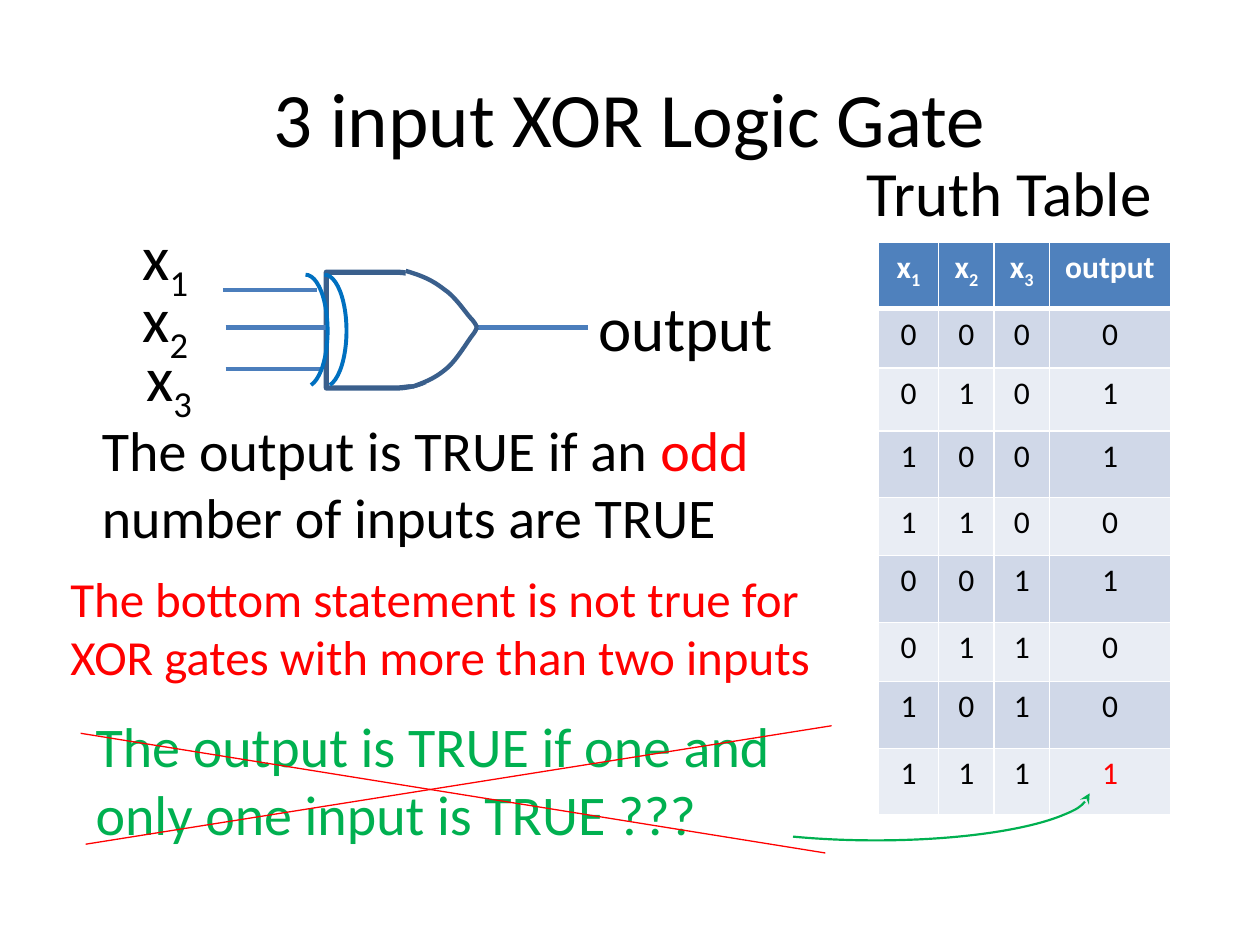
import itertools
from dataclasses import dataclass

import pptx
import pptx.dml.color
import pptx.enum.shapes
import pptx.enum.text
import pptx.oxml
import pptx.oxml.ns
import pptx.util

SHAPE = pptx.enum.shapes.MSO_SHAPE
ALIGN = pptx.enum.text.PP_ALIGN
ANCHOR = pptx.enum.text.MSO_ANCHOR


@dataclass(frozen=True)
class Theme:
    font: str = "Calibri"
    black: str = "000000"
    white: str = "FFFFFF"
    red: str = "FF0000"
    green: str = "00B050"
    wire: str = "4B7EBC"
    gate: str = "3A5F8C"
    arc: str = "0070C0"
    header: str = "4F81BD"
    bands: tuple = ("D0D8E8", "E9EDF4")
    title: int = 44
    label: int = 36
    body: int = 32
    remark: int = 28
    cell: int = 18


T = Theme()
WIDTH, HEIGHT = pptx.util.Inches(10), pptx.util.Inches(7.5)
COLS, ROWS = 100, 75  # layout grid covering the whole slide


def col(n):
    return round(n * WIDTH / COLS)


def row(n):
    return round(n * HEIGHT / ROWS)


def box(x, y, w, h):
    return col(x), row(y), col(w), row(h)


def rgb(value):
    return pptx.dml.color.RGBColor.from_string(value)


def add_run(p, text, size, color, bold=False, subscript=False):
    r = p.add_run()
    r.text = text
    r.font.name, r.font.size, r.font.bold = T.font, pptx.util.Pt(size), bold
    r.font.color.rgb = rgb(color)
    if subscript:
        r.font._element.set("baseline", "-25000")


def add_text(s, place, size, *runs, inset=1, align=ALIGN.LEFT, anchor=ANCHOR.TOP):
    """Each run is (text, colour) or (text, colour, subscript)."""
    tf = s.shapes.add_textbox(*box(*place)).text_frame
    tf.word_wrap, tf.vertical_anchor, tf.margin_left = True, anchor, col(inset)
    p = tf.paragraphs[0]
    p.alignment = align
    for text, color, *sub in runs:
        add_run(p, text, size, color, subscript=bool(sub))


def style_line(sp, color, width):
    sp.line.color.rgb = rgb(color)
    sp.line.width = pptx.util.Pt(width)


def add_line(shapes, start, end, color, width):
    line = shapes.add_connector(
        pptx.enum.shapes.MSO_CONNECTOR.STRAIGHT,
        col(start[0]), row(start[1]), col(end[0]), row(end[1]))
    style_line(line, color, width)
    pptx.oxml.ns.qn("a:effectLst")
    line._element.spPr.append(pptx.oxml.parse_xml(
        f'<a:effectLst {pptx.oxml.ns.nsdecls("a")}/>'))


def add_outline(shapes, kind, place, color, width, adjust=()):
    sp = shapes.add_shape(kind, *box(*place))
    sp.shadow.inherit = False
    sp.fill.background()
    style_line(sp, color, width)
    for i, value in enumerate(adjust):
        sp.adjustments[i] = value
    return sp


def bezier(points, steps=12):
    """Sample a chain of cubic curves that share their end points."""
    out = [points[0]]
    for i in range(0, len(points) - 1, 3):
        a, b, c, d = points[i:i + 4]
        for t in (k / steps for k in range(1, steps + 1)):
            u = 1 - t
            out.append(tuple(
                u**3 * a[j] + 3 * u * u * t * b[j] + 3 * u * t * t * c[j] + t**3 * d[j]
                for j in (0, 1)))
    return out


def add_curve(shapes, points, color, width):
    start, *rest = [(col(x), row(y)) for x, y in bezier(points)]
    fb = shapes.build_freeform(*start)
    fb.add_line_segments(rest, close=False)
    sp = fb.convert_to_shape()
    sp.shadow.inherit = False
    sp.fill.background()
    style_line(sp, color, width)


def add_gate(s):
    shapes = s.shapes.add_group_shape().shapes
    bow = (162, 50.54)
    add_line(shapes, (37.7, 26), (46.7, 26), T.wire, 2.5)
    add_outline(shapes, SHAPE.FLOWCHART_DELAY, (25.9, 21.6, 10.8, 9.2), T.gate, 3)
    add_outline(shapes, SHAPE.ARC, (24, 21.8, 3.5, 8.9), T.arc, 2.25, bow)
    add_line(shapes, (17.7, 23), (25.2, 23), T.wire, 2.5)
    add_line(shapes, (17.9, 29.3), (25.4, 29.3), T.wire, 2.5)
    # White cover hides the round end, so the pointed nose can replace it
    cover = shapes.add_shape(SHAPE.RECTANGLE, *box(32.2, 21.5, 5, 9))
    cover.shadow.inherit = False
    cover.fill.solid()
    cover.fill.fore_color.rgb = rgb(T.white)
    cover.line.fill.background()
    add_curve(shapes, [(32.2, 21.5), (33.6, 21.9), (34.4, 22.3), (35.3, 23),
                       (36.2, 23.6), (37, 24.9), (37.5, 25.4),
                       (37.9, 25.9), (37.8, 26), (37.9, 26)], T.gate, 2.5)
    add_curve(shapes, [(32.7, 30.7), (33.9, 30.3), (34.7, 29.9), (35.5, 29.2),
                       (36.3, 28.5), (37.1, 27.1), (37.5, 26.6),
                       (37.9, 26.1), (37.8, 25.9), (37.9, 26)], T.gate, 2.5)
    add_line(shapes, (17.9, 26), (25.9, 26), T.wire, 2.5)
    add_outline(shapes, SHAPE.ARC, (22.5, 21.8, 3.5, 8.9), T.arc, 2.25, bow)


def style_cell(cell, fill, bottom):
    cell.fill.solid()
    cell.fill.fore_color.rgb = rgb(fill)
    tcPr = cell._tc.get_or_add_tcPr()
    for i, (side, width) in enumerate(zip("LRTB", (1, 1, 1, bottom))):
        tcPr.insert(i, pptx.oxml.parse_xml(
            f'<a:ln{side} {pptx.oxml.ns.nsdecls("a")} w="{pptx.util.Pt(width)}">'
            f'<a:solidFill><a:srgbClr val="{T.white}"/></a:solidFill></a:ln{side}>'))
    p = cell.text_frame.paragraphs[0]
    p.alignment = ALIGN.CENTER
    return p


def add_truth_table(s):
    widths = (4.8, 4.4, 4.4, 9.6)
    heights = (5.3, 4.7, 5, 5.3, 4.6, 5.3, 4.7, 5.3, 5.3)
    table = s.shapes.add_table(len(heights), len(widths),
                               *box(69.7, 19.2, sum(widths), sum(heights))).table
    for c, w in zip(table.columns, widths):
        c.width = col(w)
    for r, h in zip(table.rows, heights):
        r.height = row(h)
    # Header
    for j in range(4):
        p = style_cell(table.cell(0, j), T.header, 3)
        add_run(p, "x" if j < 3 else "output", T.cell, T.white, bold=True)
        if j < 3:
            add_run(p, str(j + 1), T.cell, T.white, bold=True, subscript=True)
    # All input combinations, x3 changing slowest; output is their parity
    for i, (x3, x1, x2) in enumerate(itertools.product((0, 1), repeat=3)):
        values = (x1, x2, x3, (x1 + x2 + x3) % 2)
        for j, value in enumerate(values):
            p = style_cell(table.cell(i + 1, j), T.bands[i % 2], 1)
            marked = j == 3 and all(values)
            add_run(p, str(value), T.cell, T.red if marked else T.black)


def main():
    prs = pptx.Presentation()
    prs.slide_width, prs.slide_height = WIDTH, HEIGHT
    s = prs.slides.add_slide(prs.slide_layouts[6])

    # Title and labels
    add_text(s, (5, 3, 90, 12.5), T.title, ("3 input XOR Logic Gate", T.black),
             align=ALIGN.CENTER, anchor=ANCHOR.MIDDLE)
    for i, (x, y) in enumerate(((8.1, 16.8), (8.1, 21.7), (8.4, 26.4)), 1):
        add_text(s, (x, y, 10, 7.1), T.label, ("x", T.black),
                 (str(i), T.black, True), inset=3.2)
    add_text(s, (45.4, 22.4, 20.6, 7.1), T.label, ("output", T.black), inset=2.1)
    add_text(s, (66.7, 11.7, 26.3, 11.1), T.label, ("Truth Table", T.black), inset=2.1)

    add_truth_table(s)
    add_gate(s)

    # Statements
    add_text(s, (7.1, 32.5, 60.8, 11.8), T.body, ("The output is TRUE if an ", T.black),
             ("odd", T.red), (" number of inputs are TRUE", T.black))
    add_text(s, (6.6, 56, 62.2, 11.8), T.body,
             ("The output is TRUE if one and only one input is TRUE ???", T.green))

    # Arrow to the last output
    arrow = add_outline(s.shapes, SHAPE.ARC, (52.5, 58.9, 34, 7.8), T.green, 1.25,
                        (0.32, 90.75))
    arrow.line._get_or_add_ln().append(pptx.oxml.parse_xml(
        f'<a:headEnd {pptx.oxml.ns.nsdecls("a")} type="stealth"/>'))

    # Cross over the wrong statement
    cross = s.shapes.add_group_shape().shapes
    add_line(cross, (6.4, 58.2), (65.5, 67.7), T.red, 0.75)
    add_line(cross, (6.8, 67), (66, 57.6), T.red, 0.75)
    add_text(s, (4.6, 44.6, 65.3, 10.4), T.remark,
             ("The bottom statement is not true for XOR gates with more than two inputs",
              T.red))

    prs.save("out.pptx")


if __name__ == "__main__":
    main()
